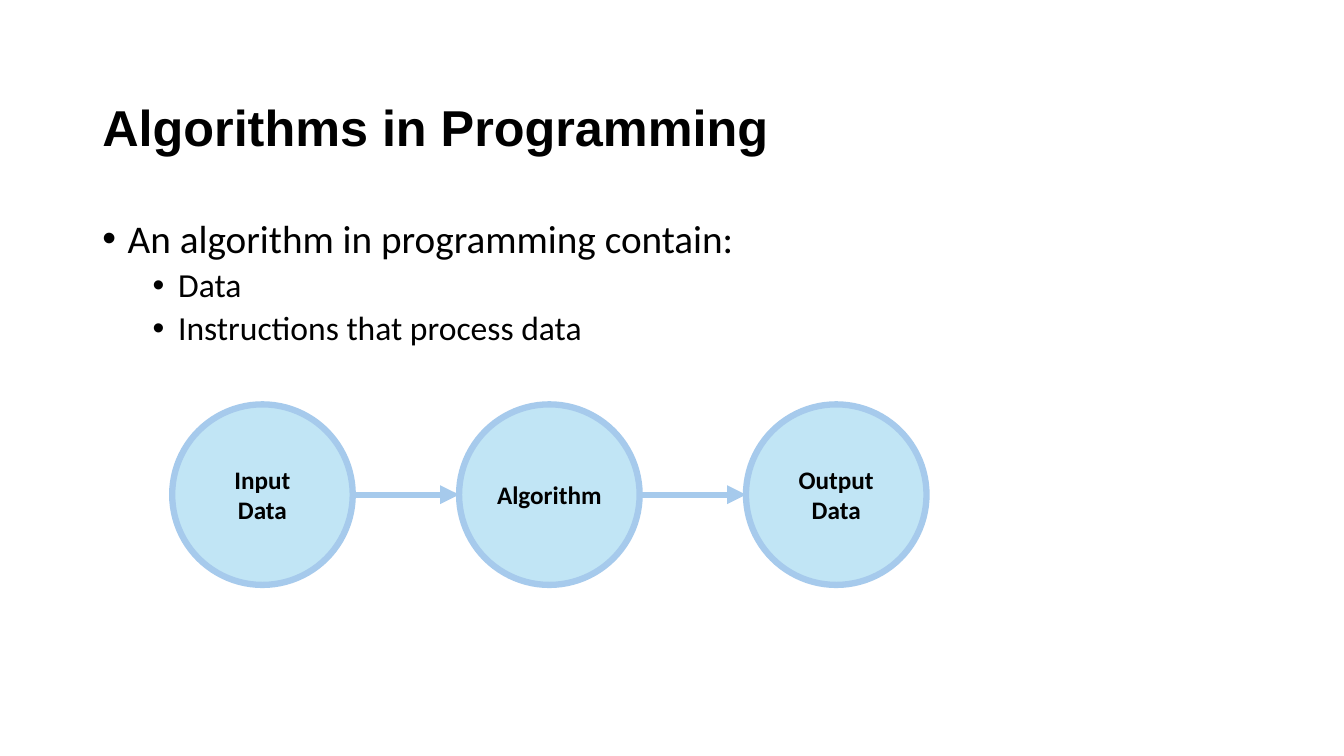
from pptx import Presentation
from pptx.dml.color import RGBColor
from pptx.enum.shapes import MSO_CONNECTOR as CONN, MSO_SHAPE as SHAPE
from pptx.enum.text import MSO_ANCHOR as ANCHOR, PP_ALIGN as ALIGN
from pptx.oxml.ns import qn
from pptx.util import Cm, Pt
from lxml.etree import SubElement


def rgb(value):
    return RGBColor.from_string(value)


class Deck:
    ink, fill, edge = "000000", "C1E5F5", "A6CAEC"
    heading, body = "Arial", "Calibri"
    edge_width = Pt(4.5)

    def __init__(self):
        self.prs = Presentation()
        self.prs.slide_width, self.prs.slide_height = Cm(33.87), Cm(19.05)
        self.s = self.prs.slides.add_slide(self.prs.slide_layouts[6])

    def font(self, p, name, size, bold=False):
        for r in p.runs:
            r.font.name, r.font.size, r.font.bold = name, Pt(size), bold
            r.font.color.rgb = rgb(self.ink)

    def box(self, x, y, w, h, anchor):
        tf = self.s.shapes.add_textbox(Cm(x), Cm(y), Cm(w), Cm(h)).text_frame
        tf.word_wrap = True
        tf.vertical_anchor = anchor
        return tf

    def title(self, text, x, y, w, h):
        tf = self.box(x, y, w, h, ANCHOR.MIDDLE)
        tf.text = text
        p = tf.paragraphs[0]
        p.line_spacing = 0.9
        self.font(p, self.heading, 36, True)

    def bullets(self, items, x, y, w, h):
        tf = self.box(x, y, w, h, ANCHOR.TOP)
        tf.text = "\n".join(text for text, level in items)
        for i, (p, (text, level)) in enumerate(zip(tf.paragraphs, items)):
            p.level = level
            p.line_spacing = 0.9
            p.space_before = Pt(5 if i else 0)
            pPr = p._p.get_or_add_pPr()
            pPr.set("marL", str(Cm(0.64 + 1.27 * level)))
            pPr.set("indent", str(Cm(-0.64)))
            SubElement(pPr, qn("a:buFont"), typeface="Arial")
            SubElement(pPr, qn("a:buChar"), char="•")
            self.font(p, self.body, 28 - 4 * level)

    def circle(self, text, x, y, size):
        sp = self.s.shapes.add_shape(SHAPE.OVAL, Cm(x), Cm(y), Cm(size), Cm(size))
        sp.shadow.inherit = False
        sp.fill.solid()
        sp.fill.fore_color.rgb = rgb(self.fill)
        sp.line.color.rgb = rgb(self.edge)
        sp.line.width = self.edge_width
        tf = sp.text_frame
        tf.word_wrap = True
        tf.vertical_anchor = ANCHOR.MIDDLE
        tf.text = text
        p = tf.paragraphs[0]
        p.alignment = ALIGN.CENTER
        self.font(p, self.body, 18, True)

    def arrow(self, x1, x2, y):
        cx = self.s.shapes.add_connector(CONN.STRAIGHT, Cm(x1), Cm(y), Cm(x2), Cm(y))
        cx.line.color.rgb = rgb(self.edge)
        cx.line.width = self.edge_width
        SubElement(cx.line._get_or_add_ln(), qn("a:tailEnd"), type="triangle")
        SubElement(cx._element.spPr, qn("a:effectLst"))


def main():
    deck = Deck()
    left, width = 2.33, 29.21
    deck.title("Algorithms in Programming", left, 2.24, width, 2.1)
    deck.bullets([("An algorithm in programming contain:", 0),
                  ("Data", 1),
                  ("Instructions that process data", 1)], left, 5.4, width, 3.74)

    steps = ["Input Data", "Algorithm", "Output Data"]
    first, top, size, pitch = 4.34, 10.19, 4.55, 7.23
    for i, step in enumerate(steps):
        deck.circle(step, first + i * pitch, top, size)
    for i in range(len(steps) - 1):
        x = first + i * pitch
        deck.arrow(x + size, x + pitch, top + size / 2)

    deck.prs.save("out.pptx")


if __name__ == "__main__":
    main()
